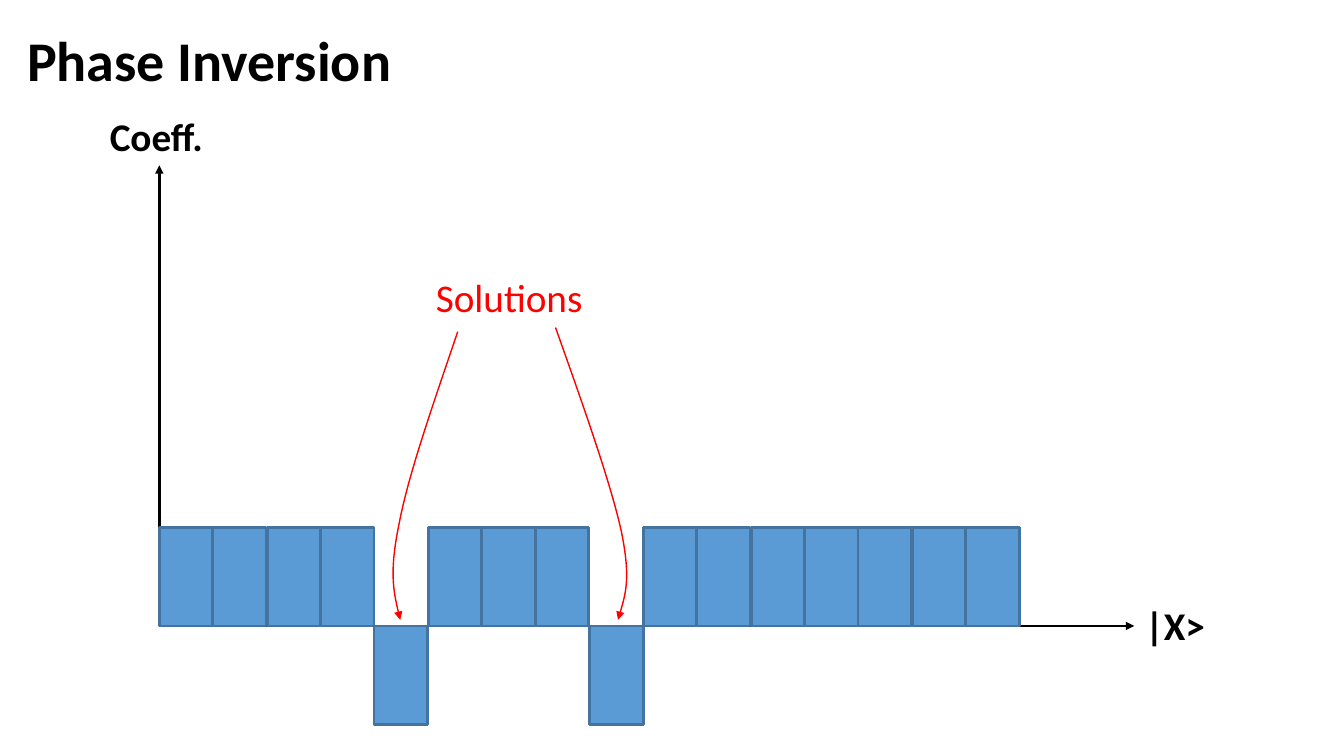
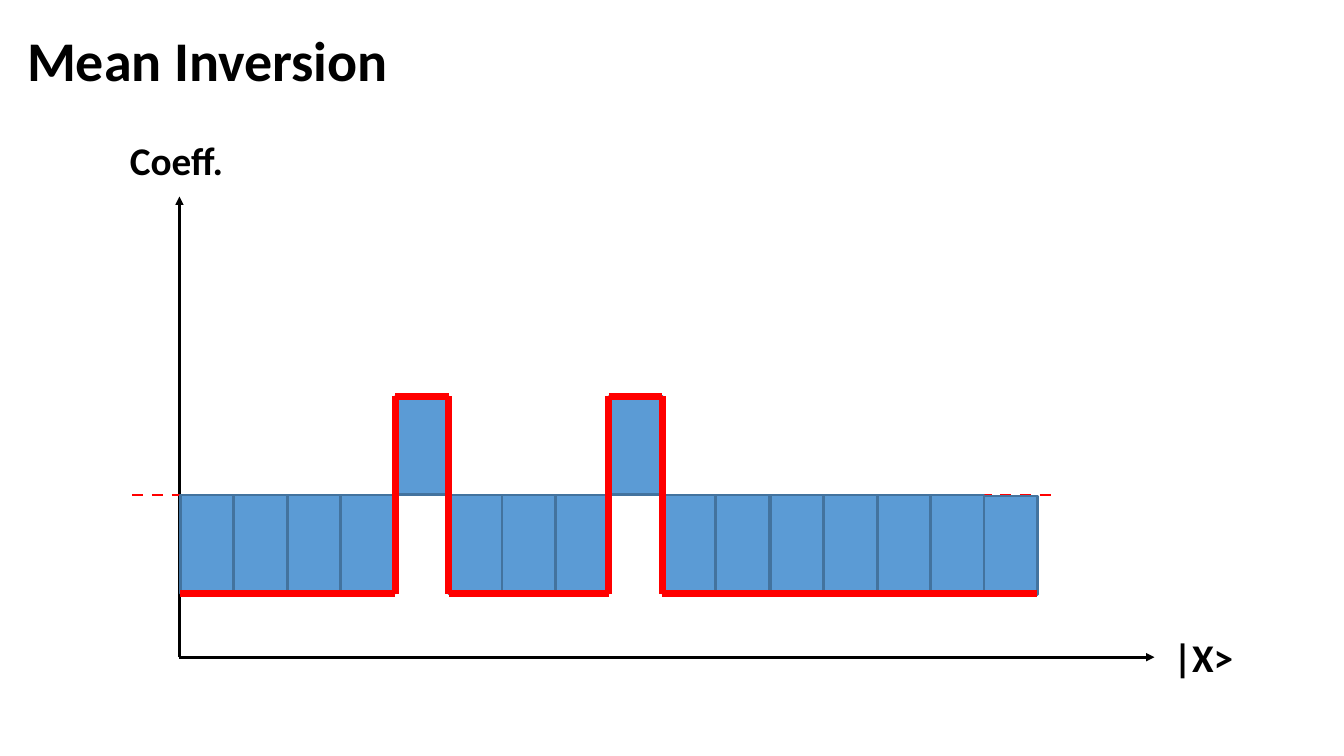
from dataclasses import dataclass
from itertools import pairwise

from lxml import etree
from pptx import Presentation
from pptx import util as u
from pptx.dml.color import RGBColor
from pptx.enum import dml, shapes, text
from pptx.oxml.ns import qn

PX = 9144


@dataclass(frozen=True)
class Theme:
    font: str = "Calibri"
    ink: str = "000000"
    red: str = "FF0000"
    fill: str = "5B9BD5"
    edge: str = "43739E"
    title: int = 40
    label: int = 28
    thin: int = 1
    line: int = 2
    bold: int = 5


T = Theme()
COUNT = 16
WIDE, HIGH = 53, 98


def px(*vals):
    return [u.Emu(round(v) * PX) for v in vals]


def rgb(code):
    return RGBColor.from_string(code)


def stroke(shape, color, width, dash=False, arrow=False):
    shape.line.color.rgb = rgb(color)
    shape.line.width = u.Pt(width)
    if dash:
        shape.line.dash_style = dml.MSO_LINE.DASH
    if arrow:
        ln = shape._element.spPr.find(qn("a:ln"))
        etree.SubElement(ln, qn("a:tailEnd"), type="triangle")


def line(slide, start, end, color, width, **style):
    link = slide.shapes.add_connector(
        shapes.MSO_CONNECTOR.STRAIGHT, *px(*start, *end))
    stroke(link, color, width, **style)
    etree.SubElement(link._element.spPr, qn("a:effectLst"))


def label(slide, words, box, size=T.label, color=T.ink, bold=True, center=False):
    frame = slide.shapes.add_textbox(*px(*box)).text_frame
    frame.word_wrap = True
    frame.auto_size = text.MSO_AUTO_SIZE.SHAPE_TO_FIT_TEXT
    frame.text = words
    para = frame.paragraphs[0]
    if center:
        para.alignment = text.PP_ALIGN.CENTER
    font = para.runs[0].font
    font.name, font.size, font.bold = T.font, u.Pt(size), bold
    font.color.rgb = rgb(color)


def bars(slide, edges, top, moved):
    for i, left in enumerate(edges):
        bar = slide.shapes.add_shape(
            shapes.MSO_SHAPE.RECTANGLE, *px(left, moved.get(i, top), WIDE, HIGH))
        bar.shadow.inherit = False
        bar.fill.solid()
        bar.fill.fore_color.rgb = rgb(T.fill)
        stroke(bar, T.edge, T.line)


def curve(slide, start, *points):
    pen = slide.shapes.build_freeform(*start, scale=PX)
    pen.add_line_segments(points, close=False)
    shape = pen.convert_to_shape()
    shape.shadow.inherit = False
    shape.fill.background()
    stroke(shape, T.red, T.thin, arrow=True)
    parts = list(shape._element.iter(qn("a:lnTo")))
    for i in range(0, len(parts), 3):
        bend = etree.Element(qn("a:cubicBezTo"))
        parts[i].addprevious(bend)
        for part in parts[i:i + 3]:
            bend.append(part[0])
            part.getparent().remove(part)


def axes(slide, left, base, x_at, y_at):
    line(slide, (left, base), (left + 967, base), T.ink, T.line, arrow=True)
    line(slide, (left, base), (left, base - 457), T.ink, T.line, arrow=True)
    label(slide, "|X>", (*x_at, 118, 57))
    label(slide, "Coeff.", (*y_at, 118, 57))


def page(deck, title):
    slide = deck.slides.add_slide(deck.slide_layouts[6])
    label(slide, title, (17, 20, 397, 77), size=T.title)
    return slide


def phase(deck):
    slide = page(deck, "Phase Inversion")
    left, base = 158, 621
    axes(slide, left, base, (1126, 592), (99, 107))
    edges = [left + 53.33 * i for i in range(COUNT)]
    bars(slide, edges, base - HIGH, {4: base, 8: base})
    curve(slide, (454, 329), (430, 400), (405, 471), (396, 519),
          (386, 567), (391, 591), (397, 615))
    curve(slide, (551, 325), (578, 401), (605, 477), (616, 526),
          (626, 574), (619, 594), (613, 615))
    label(slide, "Solutions", (350, 266, 310, 57),
          color=T.red, bold=False, center=True)


def mean(deck):
    slide = page(deck, "Mean Inversion")
    left, mid = 179, 491
    axes(slide, 178, 652, (1154, 623), (119, 130))
    line(slide, (131, mid), (1048, mid), T.red, T.line, dash=True)
    edges = [left + 53.15 * i for i in range(COUNT)]
    high, low = mid - HIGH, mid + HIGH
    bars(slide, edges, mid, {4: high, 8: high, COUNT - 1: mid + 1})
    trace = [(left, low)]
    for i in (4, 8):
        start, end = edges[i], edges[i + 1]
        trace += [(start, low), (start, high), (end, high), (end, low)]
    trace.append((edges[-1] + WIDE, low))
    for start, end in pairwise(trace):
        line(slide, start, end, T.red, T.bold)


def main():
    deck = Presentation()
    deck.slide_width, deck.slide_height = px(1333, 750)
    phase(deck)
    mean(deck)
    deck.save("out.pptx")


if __name__ == "__main__":
    main()
